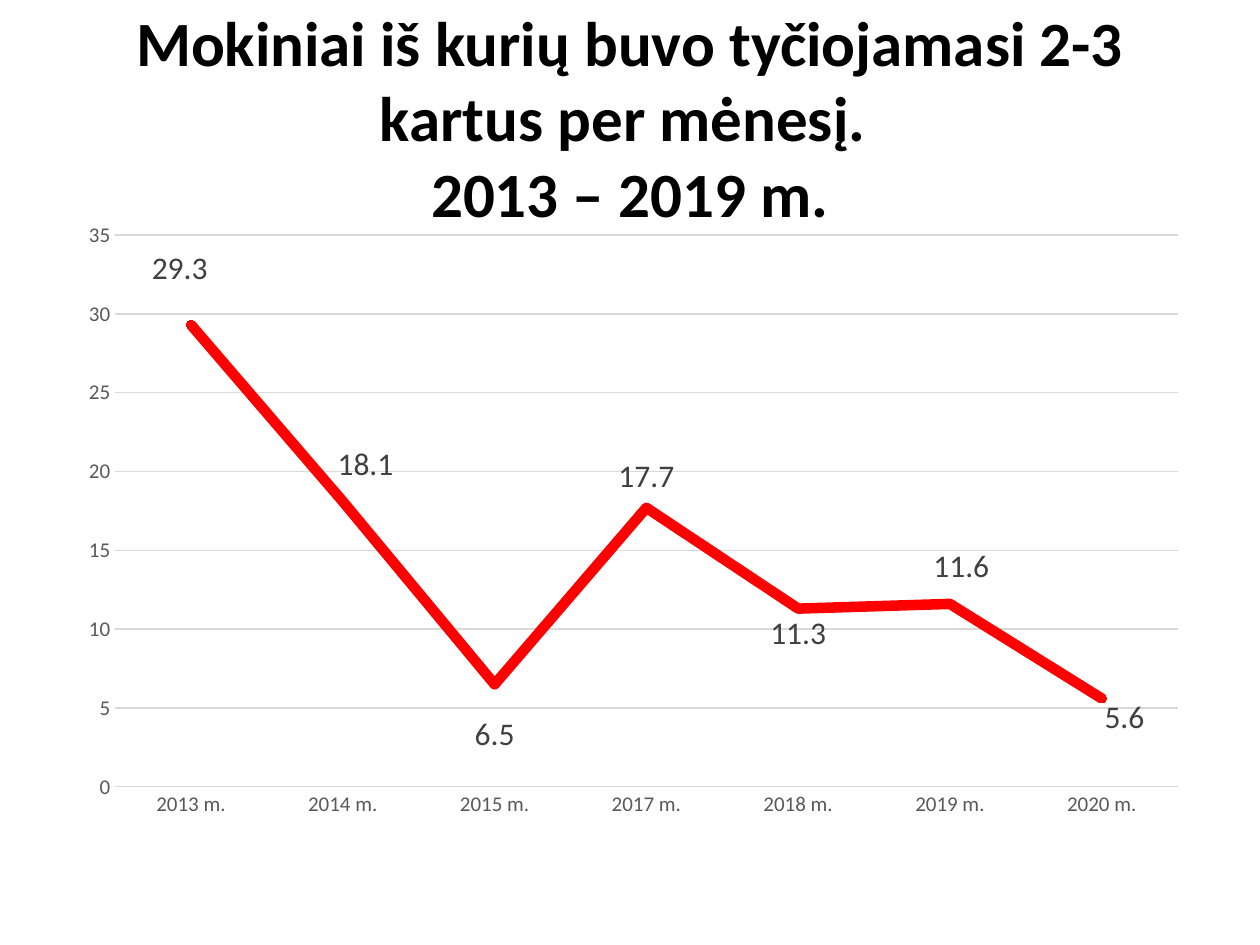
from dataclasses import dataclass

from lxml.etree import SubElement
from pptx import Presentation
from pptx.chart.data import CategoryChartData
from pptx.dml.color import RGBColor
from pptx.enum.chart import (XL_CHART_TYPE, XL_LABEL_POSITION,
                             XL_MARKER_STYLE, XL_TICK_MARK)
from pptx.enum.text import MSO_ANCHOR, PP_ALIGN
from pptx.oxml.ns import qn
from pptx.util import Cm, Pt


@dataclass(frozen=True)
class Theme:
    font: str = "Calibri"
    ink: str = "000000"
    label: str = "404040"
    axis: str = "595959"
    grid: str = "D9D9D9"
    line: str = "FF0000"
    title_size: int = 36
    label_size: int = 18
    axis_size: int = 12
    line_width: int = 6
    grid_width: float = 0.75


TITLE = ["Mokiniai iš kurių buvo tyčiojamasi 2-3 kartus per mėnesį. ",
         "2013 – 2019 m."]

# year, share of pupils, label shift from its point as a part of the chart
DATA = [
    ("2013 m.", 29.3, (-0.01, -0.09)),
    ("2014 m.", 18.1, (0.02, -0.06)),
    ("2015 m.", 6.5, (0, 0.08)),
    ("2017 m.", 17.7, (0, -0.05)),
    ("2018 m.", 11.3, (0, 0.04)),
    ("2019 m.", 11.6, (0.01, -0.06)),
    ("2020 m.", 5.6, (0.02, 0.03)),
]


def make_layout(**parts):
    """Return a function that adds a manual layout to its parent."""
    def add(parent):
        layout = SubElement(parent, qn("c:layout"))
        manual = SubElement(layout, qn("c:manualLayout"))
        for name, value in parts.items():
            SubElement(manual, qn(f"c:{name}")).set("val", str(value))
        return layout
    return add


class Page:
    def __init__(self, slide, theme):
        self.slide = slide
        self.theme = theme

    def style(self, font, size, color, bold=False):
        font.name = self.theme.font
        font.size = Pt(size)
        font.bold = bold
        font.color.rgb = RGBColor.from_string(color)

    def stroke(self, line, color, width):
        line.color.rgb = RGBColor.from_string(color)
        line.width = Pt(width)

    def title(self, lines, left, top, width, height):
        box = self.slide.shapes.add_textbox(Cm(left), Cm(top),
                                            Cm(width), Cm(height))
        frame = box.text_frame
        frame.word_wrap = True
        frame.vertical_anchor = MSO_ANCHOR.MIDDLE
        para = frame.paragraphs[0]
        para.alignment = PP_ALIGN.CENTER
        for i, text in enumerate(lines):
            if i:
                para.add_line_break()
            run = para.add_run()
            run.text = text
            self.style(run.font, self.theme.title_size, self.theme.ink, True)

    def chart(self, rows, left, top, width, height):
        years, values, shifts = zip(*rows)
        data = CategoryChartData()
        data.categories = years
        data.add_series("Series 1", values)
        chart = self.slide.shapes.add_chart(
            XL_CHART_TYPE.LINE_MARKERS, Cm(left), Cm(top),
            Cm(width), Cm(height), data).chart
        chart.has_legend = False
        chart.has_title = False
        chart.font.name = self.theme.font
        chart.plots[0].vary_by_categories = False
        self.axes(chart)
        self.place(chart)
        series = chart.plots[0].series[0]
        self.curve(series)
        self.labels(series, shifts)

    def axes(self, chart):
        theme = self.theme
        for axis in (chart.category_axis, chart.value_axis):
            axis.major_tick_mark = XL_TICK_MARK.NONE
            axis.minor_tick_mark = XL_TICK_MARK.NONE
            self.style(axis.tick_labels.font, theme.axis_size, theme.axis)
        self.stroke(chart.category_axis.format.line,
                    theme.grid, theme.grid_width)
        scale = chart.value_axis
        scale.minimum_scale, scale.maximum_scale = 0, 35
        scale.major_unit = 5
        scale.format.line.fill.background()
        self.stroke(scale.major_gridlines.format.line,
                    theme.grid, theme.grid_width)

    def place(self, chart):
        """Fix the inner plot area within the chart."""
        area = chart.plots[0]._element.getparent()
        for old in area.findall(qn("c:layout")):
            area.remove(old)
        add = make_layout(layoutTarget="inner", xMode="edge", yMode="edge",
                          x=0.046, y=0.023, w=0.937, h=0.885)
        area.insert(0, add(area))

    def curve(self, series):
        theme = self.theme
        series.smooth = False
        self.stroke(series.format.line, theme.line, theme.line_width)
        marker = series.marker
        marker.style = XL_MARKER_STYLE.CIRCLE
        marker.size = 5
        marker.format.fill.solid()
        marker.format.fill.fore_color.rgb = RGBColor.from_string(theme.line)
        self.stroke(marker.format.line, theme.line, theme.grid_width)

    def labels(self, series, shifts):
        theme = self.theme
        group = series.data_labels
        group.show_value = True
        group.position = XL_LABEL_POSITION.CENTER
        self.style(group.font, theme.label_size, theme.label)
        for i, (x, y) in enumerate(shifts):
            label = series.points[i].data_label
            self.style(label.font, theme.label_size, theme.label)
            label.position = XL_LABEL_POSITION.CENTER
        root = series._element.find(qn("c:dLbls"))
        for node, (x, y) in zip(root.findall(qn("c:dLbl")), shifts):
            node.insert(1, make_layout(x=x, y=y)(node))
        for lead in root.findall(qn("c:showLeaderLines")):
            lead.set("val", "0")


def main():
    deck = Presentation()
    deck.slide_width, deck.slide_height = Cm(25.4), Cm(19.05)
    page = Page(deck.slides.add_slide(deck.slide_layouts[6]), Theme())
    page.title(TITLE, 1.27, 0.76, 22.86, 3.18)
    page.chart(DATA, 1.27, 4.45, 22.86, 12.57)
    deck.save("out.pptx")


if __name__ == "__main__":
    main()
